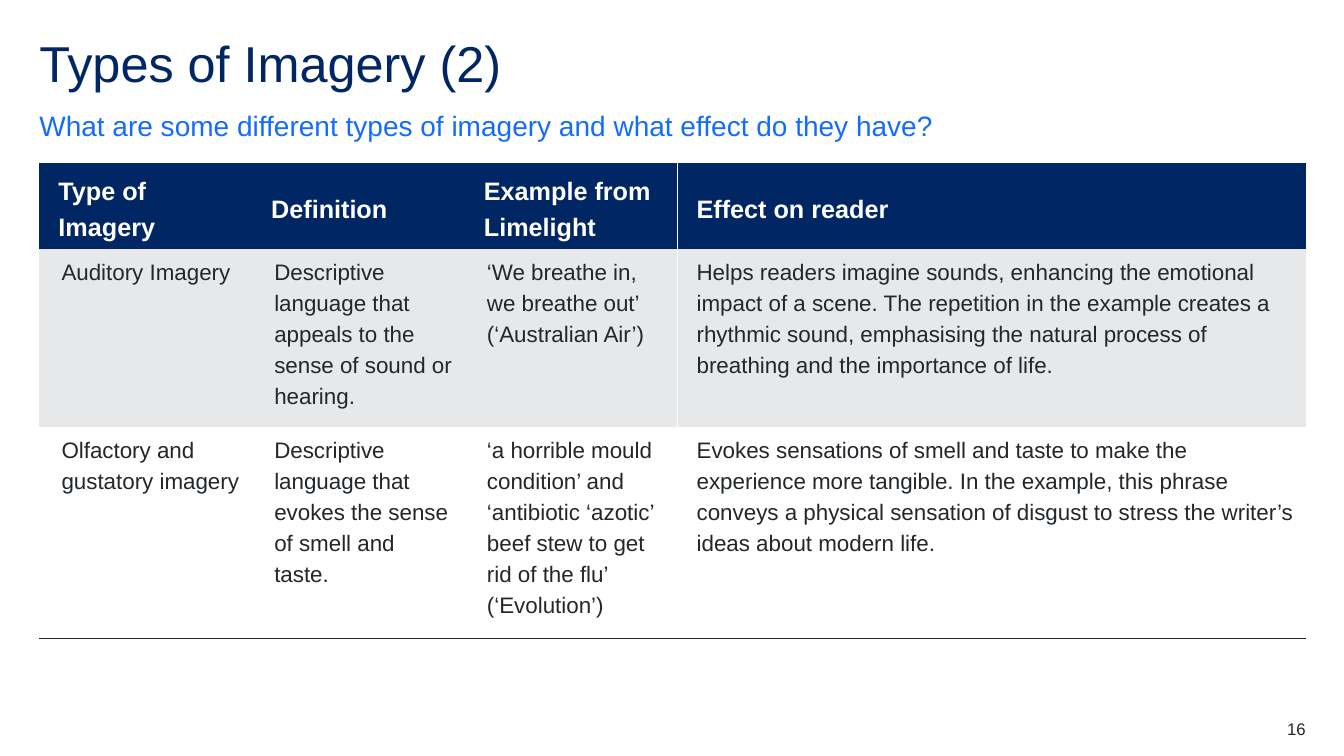
from lxml import etree
from pptx import Presentation
from pptx.dml.color import RGBColor
from pptx.enum import text
from pptx.oxml import ns
from pptx.util import Inches, Pt

COLORS = {"navy": "002664", "blue": "146CFD", "ink": "22272B",
          "grey": "E7E8EA", "white": "FFFFFF"}
FONT = "Arial"
NO_GRID_STYLE = "{2D5ABB26-0587-4C30-8999-92F81FD0307C}"
LEFT, WIDTH = 0.39, 12.56
COLUMN_WIDTHS = [2.11, 2.11, 2.11, 6.23]
ROW_HEIGHTS = [0.8, 1.75, 1.95]
ROW_FILLS = ["navy", "grey", "white"]
IMAGERY = [
    ["Type of Imagery", "Definition", "Example from Limelight", "Effect on reader"],
    ["Auditory Imagery",
     "Descriptive language that appeals to the sense of sound or hearing.",
     "‘We breathe in, we breathe out’ (‘Australian Air’)",
     "Helps readers imagine sounds, enhancing the emotional impact of a scene. "
     "The repetition in the example creates a rhythmic sound, emphasising the "
     "natural process of breathing and the importance of life."],
    ["Olfactory and gustatory imagery",
     "Descriptive language that evokes the sense of smell and taste.",
     "‘a horrible mould condition’ and ‘antibiotic ‘azotic’ beef stew to get "
     "rid of the flu’ (‘Evolution’)",
     "Evokes sensations of smell and taste to make the experience more tangible. "
     "In the example, this phrase conveys a physical sensation of disgust to "
     "stress the writer’s ideas about modern life."],
]


def rgb(name):
    return RGBColor.from_string(COLORS[name])


def write(tf, words, size, color, bold=False, spacing=1.0, after=0):
    tf.text = words
    p = tf.paragraphs[0]
    p.line_spacing = spacing
    p.space_after = Pt(after)
    font = p.runs[0].font
    font.name, font.size, font.bold = FONT, Pt(size), bold
    font.color.rgb = rgb(color)
    return p


def add_text(s, box, words, size, color, anchor=text.MSO_ANCHOR.TOP, **style):
    """Add a text box without insets and return its paragraph."""
    tf = s.shapes.add_textbox(*map(Inches, box)).text_frame
    tf.word_wrap = True
    tf.vertical_anchor = anchor
    tf.margin_left = tf.margin_right = tf.margin_top = tf.margin_bottom = 0
    return write(tf, words, size, color, **style)


def add_border(cell, side, color):
    """Draw a 1 pt line on side L, R or B; call in that order, before the fill."""
    tcPr = cell._tc.get_or_add_tcPr()
    ln = etree.SubElement(tcPr, ns.qn(f"a:ln{side}"), w=str(Pt(1)))
    fill = etree.SubElement(ln, ns.qn("a:solidFill"))
    etree.SubElement(fill, ns.qn("a:srgbClr"), val=COLORS[color])


def format_cell(cell, words, row, col):
    header, last_col = row == 0, len(COLUMN_WIDTHS) - 1
    if col == last_col:
        add_border(cell, "L", "white")
    if col == last_col - 1:
        add_border(cell, "R", "white")
    if row == len(ROW_HEIGHTS) - 1:
        add_border(cell, "B", "ink")
    cell.fill.solid()
    cell.fill.fore_color.rgb = rgb(ROW_FILLS[row])
    cell.margin_left = cell.margin_right = Inches(0.07 if header or col == last_col else 0.1)
    cell.margin_top = cell.margin_bottom = Inches(0.05)
    cell.vertical_anchor = text.MSO_ANCHOR.MIDDLE if header else text.MSO_ANCHOR.TOP
    p = write(cell.text_frame, words, 18 if header else 16,
              "white" if header else "ink", bold=header, spacing=1.25, after=12)
    pPr = p._p.get_or_add_pPr()
    pPr.set("marL", str(Inches(0.12)))
    pPr.set("indent", "0")


def add_imagery_table(s, left, top):
    frame = s.shapes.add_table(len(ROW_HEIGHTS), len(COLUMN_WIDTHS), Inches(left), Inches(top),
                               Inches(sum(COLUMN_WIDTHS)), Inches(sum(ROW_HEIGHTS)))
    table = frame.table
    table.horz_banding = False
    frame._element.find(".//" + ns.qn("a:tableStyleId")).text = NO_GRID_STYLE
    for column, width in zip(table.columns, COLUMN_WIDTHS):
        column.width = Inches(width)
    for row, height in enumerate(ROW_HEIGHTS):
        table.rows[row].height = Inches(height)
        for col, words in enumerate(IMAGERY[row]):
            format_cell(table.cell(row, col), words, row, col)


def add_heading(s, left, top, width):
    add_text(s, (left, top, width, 0.6), "Types of Imagery (2)", 36, "navy", spacing=0.9)
    add_text(s, (left, top + 0.68, width, 0.34),
             "What are some different types of imagery and what effect do they have?",
             20, "blue", anchor=text.MSO_ANCHOR.BOTTOM, spacing=1.5, after=12)


def add_page_number(s, right, top):
    p = add_text(s, (right - 0.79, top, 0.79, 0.2), "16", 12, "ink")
    p.alignment = text.PP_ALIGN.RIGHT


def main():
    prs = Presentation()
    prs.slide_width, prs.slide_height = Inches(13.33), Inches(7.5)
    s = prs.slides.add_slide(prs.slide_layouts[6])
    add_heading(s, LEFT, 0.39, WIDTH)
    add_imagery_table(s, LEFT, 1.62)
    add_page_number(s, LEFT + WIDTH, 7.13)
    prs.save("out.pptx")


if __name__ == "__main__":
    main()
